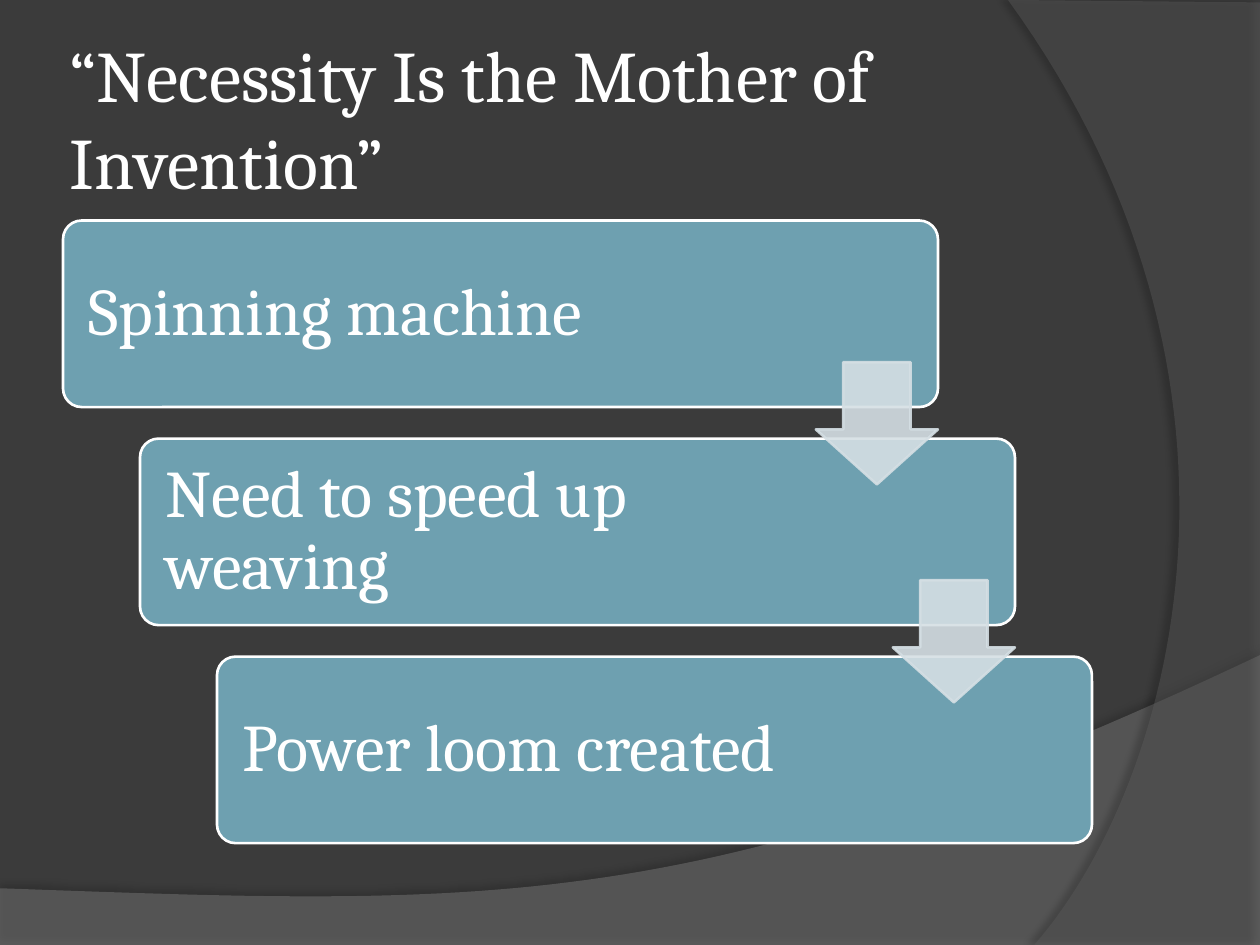
import pptx
import pptx.util
import pptx.dml.color
import pptx.enum.shapes
import pptx.enum.text
import pptx.oxml.ns
from dataclasses import dataclass
from lxml import etree

Pt = pptx.util.Pt
qn = pptx.oxml.ns.qn
SHAPES = pptx.enum.shapes.MSO_SHAPE


@dataclass(frozen=True)
class Theme:
    font: str = "Cambria"
    title_size: float = 41.4
    step_size: float = 38
    outline: float = 1.5
    background: str = "3B3B3B"
    text: str = "FFFFFF"
    step: str = "6EA0B0"
    arrow: str = "D5DFE4"
    low_wave: str = "7F7F7F"
    side_wave: str = "5E5E5E"


THEME = Theme()
STEPS = ["Spinning machine", "Need to speed up weaving", "Power loom created"]
STEP_LEFT, STEP_TOP, STEP_WIDTH, STEP_HEIGHT = 36, 126, 500, 106.6
SHIFT_X, SHIFT_Y = 44, 124.6
ARROW_SIZE = 69.8
ARROW_LEFT = STEP_LEFT + STEP_WIDTH - ARROW_SIZE
ARROW_TOP = 207


def rgb(color):
    return pptx.dml.color.RGBColor.from_string(color)


def paint(fill_format, color):
    fill_format.solid()
    fill_format.fore_color.rgb = rgb(color)


def set_alpha(parent, percent):
    for color in parent.iter(qn("a:srgbClr")):
        etree.SubElement(color, qn("a:alpha"), val=str(percent * 1000))


def style_text(frame, text, size):
    frame.word_wrap = True
    frame.auto_size = pptx.enum.text.MSO_AUTO_SIZE.NONE
    frame.vertical_anchor = pptx.enum.text.MSO_ANCHOR.MIDDLE
    frame.text = text
    paragraph = frame.paragraphs[0]
    paragraph.alignment = pptx.enum.text.PP_ALIGN.LEFT
    paragraph.font.name = THEME.font
    paragraph.font.size = Pt(size)
    paragraph.font.color.rgb = rgb(THEME.text)
    return paragraph


def curve(start, control_a, control_b, end, pieces=60):
    points = []
    for i in range(1, pieces + 1):
        t = i / pieces
        weights = (1 - t) ** 3, 3 * t * (1 - t) ** 2, 3 * t * t * (1 - t), t ** 3
        corners = start, control_a, control_b, end
        points.append(tuple(sum(w * c[axis] for w, c in zip(weights, corners))
                            for axis in (0, 1)))
    return points


def add_wave(slide, points, color, alpha, shadow_alpha, distance, direction):
    vertices = [(Pt(x), Pt(y)) for x, y in points]
    builder = slide.shapes.build_freeform(*vertices[0])
    builder.add_line_segments(vertices[1:], close=True)
    wave = builder.convert_to_shape()
    paint(wave.fill, color)
    wave.line.fill.background()
    set_alpha(wave._element.spPr, alpha)
    wave.shadow.inherit = False
    effects = wave._element.spPr.find(qn("a:effectLst"))
    shadow = etree.SubElement(
        effects, qn("a:outerShdw"), blurRad=str(Pt(4)), dist=str(Pt(distance)),
        dir=str(direction * 60000), algn="ctr", rotWithShape="0")
    etree.SubElement(shadow, qn("a:srgbClr"), val="000000")
    set_alpha(shadow, shadow_alpha)


def add_backdrop(slide):
    paint(slide.background.fill, THEME.background)
    low_edge = curve((720, 374.4), (402.5, 524.9), (281.5, 517.7), (0, 507.6))
    add_wave(slide, [(0, 540), (720, 540), (720, 374.4)] + low_edge,
             THEME.low_wave, 45, 35, 3.5, 270)
    side_edge = curve((591, 540), (673.2, 445.7), (733, 216), (576, 0))
    add_wave(slide, [(720, 1.4), (720, 540), (591, 540)] + side_edge,
             THEME.side_wave, 40, 45, 4, 180)


def add_title(slide, text):
    title = slide.shapes.title
    title.left, title.top, title.width, title.height = map(Pt, (36, 21.6, 588, 90))
    frame = title.text_frame
    frame.margin_left = frame.margin_right = Pt(3.6)
    frame.margin_top = frame.margin_bottom = Pt(3.6)
    style_text(frame, text, THEME.title_size)
    slide.shapes._spTree.append(title._element)


def add_block(slide, kind, box, adjustments, fill, line):
    block = slide.shapes.add_shape(kind, *map(Pt, box))
    for i, value in enumerate(adjustments):
        block.adjustments[i] = value
    paint(block.fill, fill)
    paint(block.line.fill, line)
    block.line.width = Pt(THEME.outline)
    block.shadow.inherit = False
    return block


def add_step(slide, index, text):
    box = (STEP_LEFT + index * SHIFT_X, STEP_TOP + index * SHIFT_Y,
           STEP_WIDTH, STEP_HEIGHT)
    step = add_block(slide, SHAPES.ROUNDED_RECTANGLE, box, [0.1],
                     THEME.step, THEME.text)
    frame = step.text_frame
    frame.margin_left = frame.margin_top = frame.margin_bottom = Pt(11.5)
    frame.margin_right = Pt(124)
    style_text(frame, text, THEME.step_size).line_spacing = 0.9


def add_arrow(slide, index):
    box = (ARROW_LEFT + index * SHIFT_X, ARROW_TOP + index * SHIFT_Y,
           ARROW_SIZE, ARROW_SIZE)
    arrow = add_block(slide, SHAPES.DOWN_ARROW, box, [0.55, 0.45],
                      THEME.arrow, THEME.arrow)
    arrow.adjustments[0], arrow.adjustments[1] = 0.55, 0.45
    set_alpha(arrow._element.spPr, 90)


def main():
    deck = pptx.Presentation()
    deck.slide_width, deck.slide_height = Pt(720), Pt(540)
    slide = deck.slides.add_slide(deck.slide_layouts[5])
    add_backdrop(slide)
    add_title(slide, "“Necessity Is the Mother of Invention”")
    for index, text in enumerate(STEPS):
        add_step(slide, index, text)
    for index in range(len(STEPS) - 1):
        add_arrow(slide, index)
    deck.save("out.pptx")


if __name__ == "__main__":
    main()
